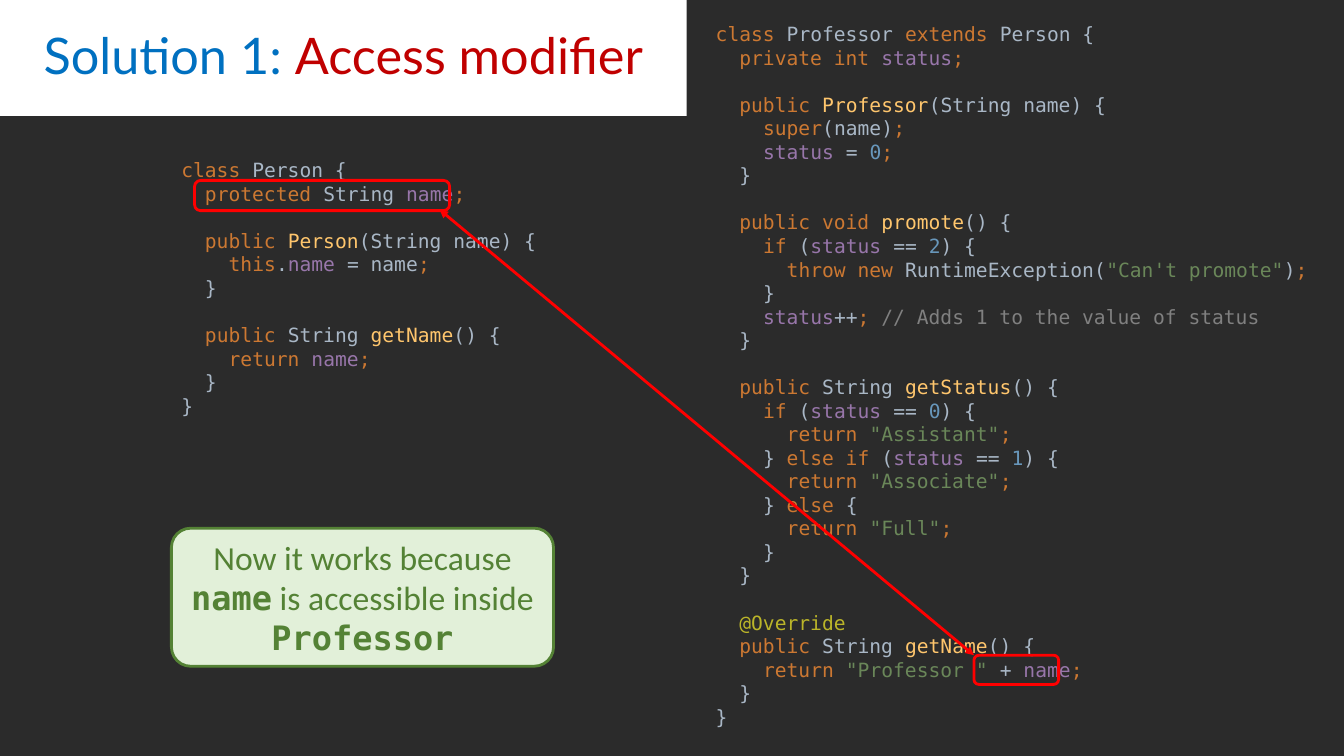
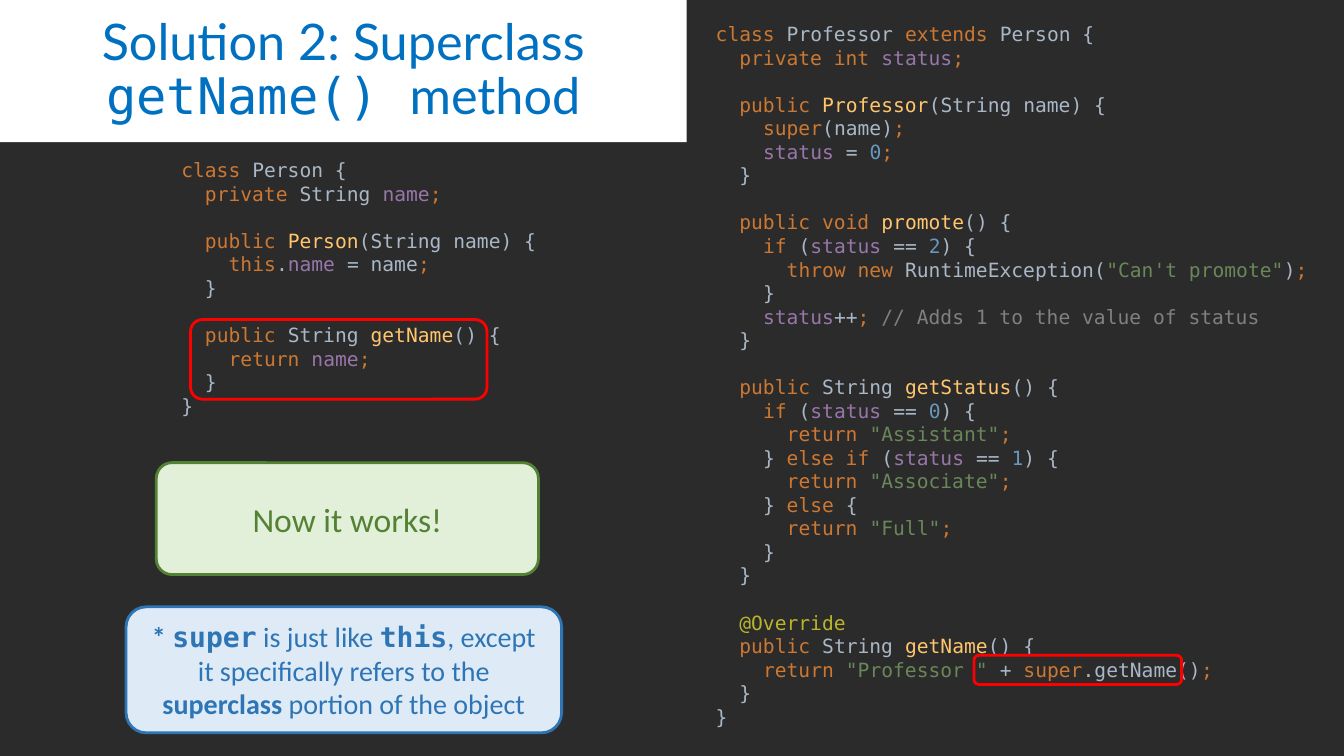
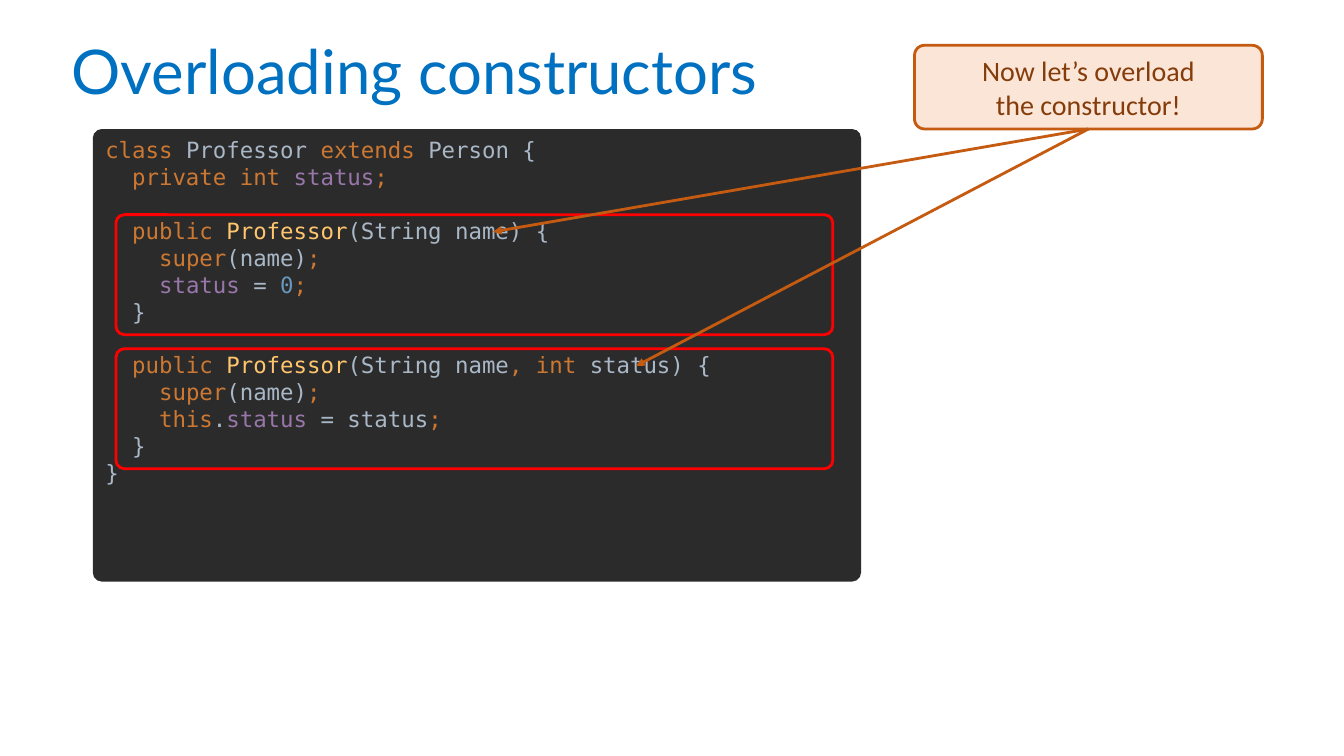
from copy import deepcopy
from dataclasses import dataclass, field

from lxml import etree
from pptx import Presentation
from pptx.dml.color import RGBColor
from pptx.enum.shapes import MSO_CONNECTOR, MSO_SHAPE
from pptx.enum.text import MSO_ANCHOR, PP_ALIGN
from pptx.oxml.ns import qn
from pptx.util import Inches, Pt

ROUND = MSO_SHAPE.ROUNDED_RECTANGLE
LINE = MSO_CONNECTOR.STRAIGHT
TOP, MIDDLE = MSO_ANCHOR.TOP, MSO_ANCHOR.MIDDLE
LEFT, CENTER = PP_ALIGN.LEFT, PP_ALIGN.CENTER
BOTTOM = 2
MONO, SANS, HEAD = "DejaVu Sans Mono", "Calibri", "Lato"


@dataclass(frozen=True)
class Theme:
    """Colours, type sizes and the text styles behind each mark."""
    dark: str = "2B2B2B"
    white: str = "FFFFFF"
    red: str = "FF0000"
    rust: str = "C55A11"
    green: tuple = ("E2F0D9", "548235", "548235")
    sky: tuple = ("DEEBF7", "2E75B6", "2E75B6")
    peach: tuple = ("FBE5D6", "C55A11", "843C0B")
    code: int = 14
    large: int = 16
    note: int = 20
    call: int = 24
    head: int = 36
    main: int = 44
    stroke: int = 2
    marks: dict = field(default_factory=lambda: {
        "k": (MONO, "CC7832", False),
        "p": (MONO, "A9B7C6", False),
        "f": (MONO, "FFC66D", False),
        "v": (MONO, "9876AA", False),
        "s": (MONO, "6A8759", False),
        "d": (MONO, "6897BB", False),
        "c": (MONO, "808080", False),
        "a": (MONO, "BBB529", False),
        "n": (SANS, None, False),
        "b": (SANS, None, True),
        "m": (MONO, None, True),
        "t": (HEAD, "0070C0", False),
        "e": (HEAD, "C00000", False),
        "g": (MONO, "0070C0", False),
    })


START = """\
`kclass `pProfessor `kextends `pPerson {
  `kprivate int `vstatus`k;

  public `fProfessor`p(String name) {
    `ksuper`p(name)`k;
    `vstatus `p= `d0`k;
  `p}

  """
RANKS = """\
`kpublic void `fpromote`p() {
    `kif `p(`vstatus `p== `d2`p) {
      `kthrow new `pRuntimeException(`s"Can't promote"`p)`k;
    `p}
    `vstatus`p++`k; `c// Adds 1 to the value of status
  `p}

  `kpublic `pString `fgetStatus`p() {
    `kif `p(`vstatus `p== `d0`p) {
      `kreturn `s"Assistant"`k;
    `p} `kelse if `p(`vstatus `p== `d1`p) {
      `kreturn `s"Associate"`k;
    `p} `kelse `p{
      `kreturn `s"Full"`k;
    `p}
  }

  `a@Override
  `kpublic `pString `fgetName`p() {
    `kreturn `s"Professor " `p+ """
SECOND = """\
`kpublic `fProfessor`p(String name`k, int `pstatus) {
    `ksuper`p(name)`k;
    this`p.`vstatus `p= status"""
END = """\
`k;
  `p}
}"""
PERSON = """\
 `pString `vname`k;

  public `fPerson`p(String name) {
    `kthis`p.`vname `p= name`k;
  `p}

  `kpublic `pString `fgetName`p() {
    `kreturn `vname"""


class Deck:
    """Holds the theme and the current slide, and draws on it."""

    def __init__(self):
        self.theme = Theme()
        self.show = Presentation()
        self.show.slide_width = Inches(13.33)
        self.show.slide_height = Inches(7.5)
        self.page = None

    def add(self, back):
        """Start a slide with a plain background."""
        self.page = self.show.slides.add_slide(self.show.slide_layouts[5])
        self.paint(self.page.background, back)

    def paint(self, item, tint):
        """Fill an item with one colour."""
        item.fill.solid()
        item.fill.fore_color.rgb = RGBColor.from_string(tint)

    def put(self, para, text, size, tint=None):
        """Add marked text run by run."""
        for part in text.split("`")[1:]:
            face, hue, bold = self.theme.marks[part[0]]
            for row, words in enumerate(part[1:].split("\n")):
                if row:
                    para.add_line_break()
                    para._p[-1].append(deepcopy(run._r.rPr))
                if words:
                    run = para.add_run()
                    run.text = words
                    run.font.name = face
                    run.font.size = Pt(size)
                    run.font.bold = bold
                    run.font.color.rgb = RGBColor.from_string(hue or tint)

    def title(self, box, text, size, anchor=MIDDLE, align=CENTER, fill=None):
        """Place and fill the title."""
        item = self.page.shapes.title
        item.left, item.top, item.width, item.height = map(Inches, box)
        if fill:
            self.paint(item, fill)
        item.text_frame.vertical_anchor = anchor
        para = item.text_frame.paragraphs[0]
        para.alignment = align
        para.line_spacing = 0.9
        self.put(para, text, size)

    def code(self, box, text):
        """Put code straight on the slide."""
        frame = self.page.shapes.add_textbox(*map(Inches, box)).text_frame
        frame.word_wrap = True
        self.put(frame.paragraphs[0], text, self.theme.code)

    def round(self, box, bend, fill=None, edge=None):
        """Draw a rounded box."""
        item = self.page.shapes.add_shape(ROUND, *map(Inches, box))
        item.shadow.inherit = False
        item.adjustments[0] = bend
        if fill:
            self.paint(item, fill)
        else:
            item.fill.background()
        if edge:
            item.line.color.rgb = RGBColor.from_string(edge)
            item.line.width = Pt(self.theme.stroke)
        else:
            item.line.fill.background()
        return item

    def panel(self, box, bend, text):
        """Draw a dark panel of code."""
        frame = self.round(box, bend, self.theme.dark).text_frame
        frame.vertical_anchor = TOP
        para = frame.paragraphs[0]
        para.alignment = LEFT
        self.put(para, text, self.theme.large)

    def ring(self, box, bend=0.17):
        """Frame part of the code in red."""
        self.round(box, bend, edge=self.theme.red)

    def call(self, box, bend, tints, size, *lines):
        """Draw a callout with centred text."""
        fill, edge, ink = tints
        item = self.round(box, bend, fill, edge)
        frame = item.text_frame
        frame.word_wrap = True
        frame.vertical_anchor = MIDDLE
        for row, text in enumerate(lines):
            para = frame.add_paragraph() if row else frame.paragraphs[0]
            para.alignment = CENTER
            self.put(para, text, size, ink)
        return item

    def arrow(self, start, stop, tint, ends=("tailEnd",), source=None):
        """Draw an arrow, joined to its source if there is one."""
        item = self.page.shapes.add_connector(LINE, *map(Inches, start + stop))
        if source is not None:
            item.begin_connect(source, BOTTOM)
        item.line.color.rgb = RGBColor.from_string(tint)
        item.line.width = Pt(self.theme.stroke)
        edge = item._element.spPr.find(qn("a:ln"))
        for end in ends:
            etree.SubElement(edge, qn("a:" + end), type="triangle")
        etree.SubElement(item._element.spPr, qn("a:effectLst"))

    def fix(self, deep, title, access, result):
        """Lay out a slide that shows one solution beside both classes."""
        self.add(self.theme.dark)
        self.title((0, 0, 6.81, deep), title, self.theme.head, fill=self.theme.white)
        self.code((7, 0.17, 6.25, 7.17), START + RANKS + result + END)
        person = "`kclass `pPerson {\n  `k" + access + PERSON + END
        self.code((1.7, 1.52, 4.37, 2.69), person)


def main():
    """Build the three slides."""
    deck = Deck()
    theme = deck.theme

    deck.fix(1.15, "`tSolution 1: `eAccess modifier", "protected", "`vname")
    deck.call((1.7, 5.24, 3.79, 1.37), 0.14, theme.green, theme.call,
              "`nNow it works because `mname`n is accessible inside `mProfessor")
    deck.ring((1.93, 1.79, 2.53, 0.3), 0.2)
    deck.ring((9.66, 6.5, 0.84, 0.29))
    deck.arrow((4.36, 2.08), (9.66, 6.5), theme.red, ("headEnd", "tailEnd"))

    deck.fix(1.41, "`tSolution 2: Superclass `ggetName() `tmethod",
             "private", "`ksuper`p.getName()")
    deck.ring((1.89, 3.17, 2.94, 0.79), 0.15)
    deck.ring((9.66, 6.5, 2.06, 0.29))
    deck.call((1.55, 4.59, 3.79, 1.11), 0.14, theme.green, theme.call,
              "`nNow it works!")
    deck.call((1.25, 6.02, 4.32, 1.25), 0.16, theme.sky, theme.note,
              "`b* `msuper`n is just like `mthis`n, except it specifically "
              "refers to the `bsuperclass`n portion of the object")

    deck.add(theme.white)
    deck.title((0.61, 0.36, 11.74, 0.92), "`tOverloading constructors",
               theme.main, TOP, LEFT)
    deck.panel((0.92, 1.28, 7.62, 4.49), 0.02, START + SECOND + END)
    for top in (2.13, 3.46):
        deck.ring((1.15, top, 7.11, 1.19), 0.07)
    note = deck.call((9.07, 0.45, 3.45, 0.83), 0.12, theme.peach, theme.note,
                     "`nNow let’s overload", "`nthe constructor!")
    for stop in ((4.89, 2.3), (6.31, 3.63)):
        deck.arrow((10.79, 1.28), stop, theme.rust, source=note)

    deck.show.save("out.pptx")


if __name__ == "__main__":
    main()
